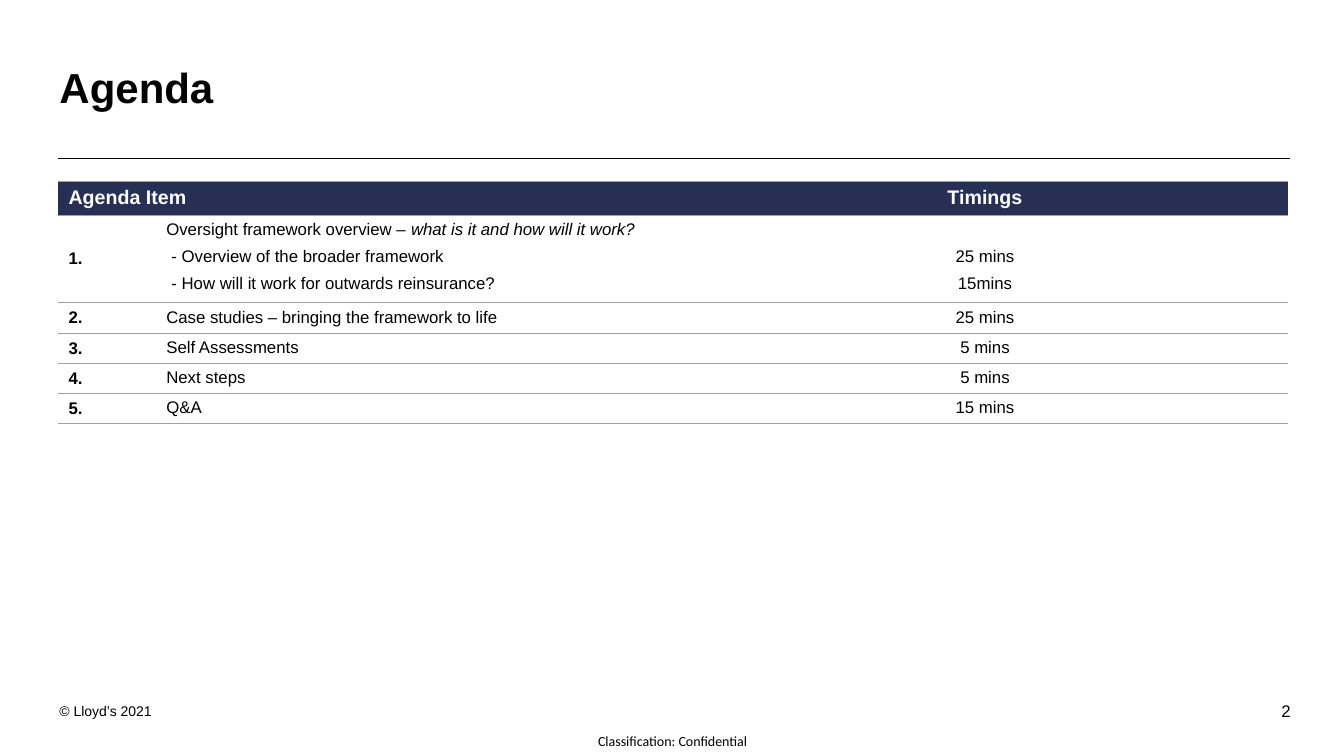
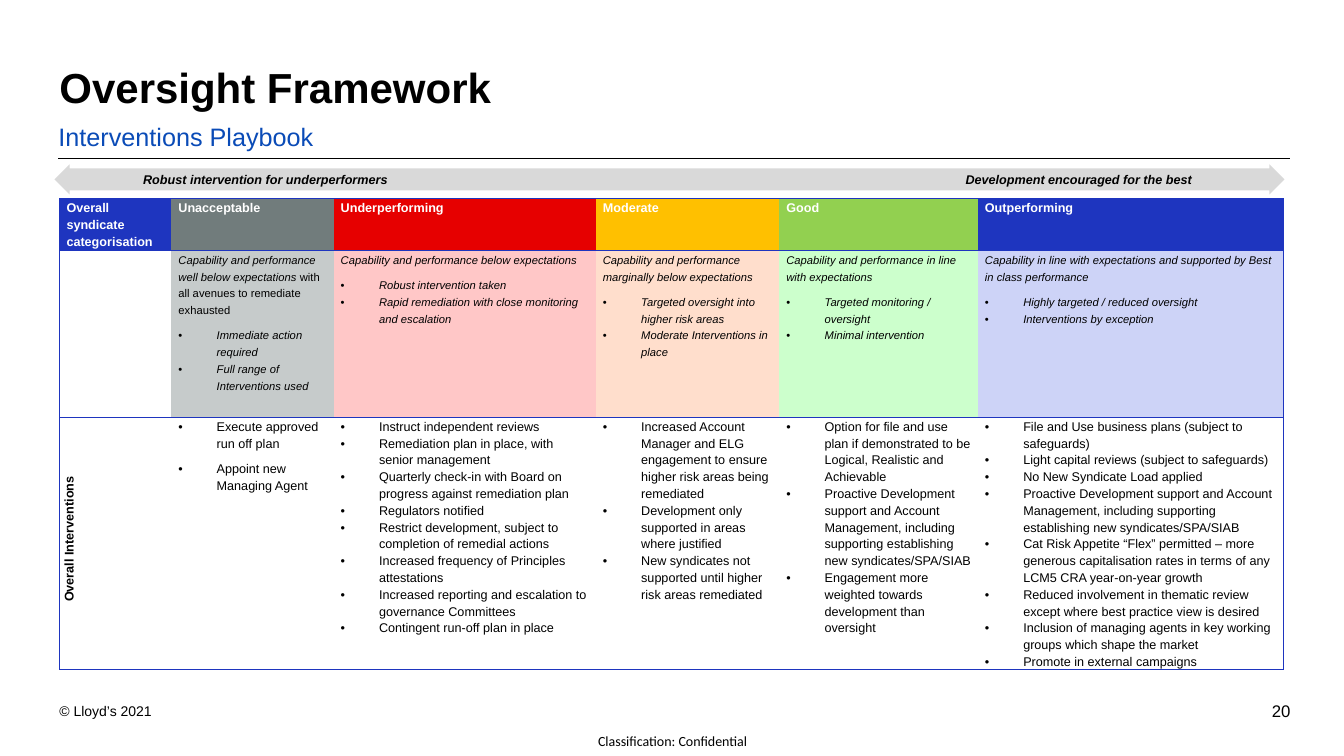
from dataclasses import dataclass
from lxml.etree import SubElement
from pptx import Presentation
from pptx.dml.color import RGBColor
from pptx.enum.shapes import MSO_CONNECTOR, MSO_SHAPE
from pptx.enum.text import MSO_ANCHOR, PP_ALIGN
from pptx.oxml import parse_xml
from pptx.oxml.ns import nsdecls, qn
from pptx.util import Inches, Pt

NAVY = "282F54"
BLUE = "1E35BF"
SUBTITLE_BLUE = "0A4BB7"
RULE_GREY = "A1A1A2"
ARROW_GREY = "D9D9D9"
BLACK = "000000"
WHITE = "FFFFFF"
PLAIN_TABLE = "{2D5ABB26-0587-4C30-8999-92F81FD0307C}"


def colour(code):
    return RGBColor.from_string(code)


@dataclass
class Span:
    text: str
    bold: bool = False
    italic: bool = False


@dataclass
class Para:
    spans: list
    after: float = 0
    left: float = 0
    bullet: bool = False
    align: PP_ALIGN = PP_ALIGN.LEFT
    spacing: object = None


class Deck:
    font = "Arial"
    left = 0.59
    width = 12.2

    def __init__(self):
        self.deck = Presentation()
        self.deck.slide_width = Inches(13.33)
        self.deck.slide_height = Inches(7.5)
        self.page = None

    def new_page(self, title, number, subtitle=None):
        self.page = self.deck.slides.add_slide(self.deck.slide_layouts[6])
        self.text(12.48, 6.91, 0.32, 0.28, Span(number), 12,
                  align=PP_ALIGN.RIGHT, anchor=MSO_ANCHOR.MIDDLE)
        self.text(self.left, 6.97, 1.63, 0.17, Span("© Lloyd’s 2021"), 10)
        self.rule(0.58, 1.57, 12.79)
        self.text(5.76, 7.21, 1.82, 0.29, Span("Classification: Confidential"), 10,
                  align=PP_ALIGN.CENTER, anchor=MSO_ANCHOR.MIDDLE, font="Calibri")
        self.text(self.left, 0.67, self.width, 0.45, Span(title, bold=True), 30, spacing=0.9)
        if subtitle:
            self.text(0.58, 1.2, self.width, 0.3, Span(subtitle), 18, SUBTITLE_BLUE)

    def text(self, x, y, width, height, span, size, ink=BLACK, align=PP_ALIGN.LEFT,
             anchor=MSO_ANCHOR.TOP, font=None, spacing=None):
        box = self.page.shapes.add_textbox(Inches(x), Inches(y), Inches(width), Inches(height))
        frame = box.text_frame
        frame.word_wrap = True
        frame.vertical_anchor = anchor
        frame.margin_left = frame.margin_right = frame.margin_top = frame.margin_bottom = 0
        self.add_paras(frame, [Para([span], align=align, spacing=spacing)], size, ink, font)

    def add_paras(self, frame, paras, size, ink, font=None):
        for index, item in enumerate(paras):
            para = frame.add_paragraph() if index else frame.paragraphs[0]
            properties = para._p.get_or_add_pPr()
            if item.left:
                properties.set("marL", str(Inches(item.left)))
            if item.bullet:
                properties.set("indent", str(-Inches(item.left)))
                SubElement(properties, qn("a:buFont")).set("typeface", self.font)
                SubElement(properties, qn("a:buChar")).set("char", "•")
            para.alignment = item.align
            para.space_after = Pt(item.after)
            if item.spacing:
                para.line_spacing = item.spacing
            for span in item.spans:
                run = para.add_run()
                run.text = span.text
                run.font.name = font or self.font
                run.font.size = Pt(size)
                run.font.bold = span.bold
                run.font.italic = span.italic
                run.font.color.rgb = colour(ink)

    def rule(self, x, y, end):
        line = self.page.shapes.add_connector(
            MSO_CONNECTOR.STRAIGHT, Inches(x), Inches(y), Inches(end), Inches(y))
        line.line.color.rgb = colour(BLACK)
        line.line.width = Pt(0.5)
        SubElement(line._element.spPr, qn("a:effectLst"))

    def double_arrow(self, x, y, width, height, fill):
        arrow = self.page.shapes.add_shape(
            MSO_SHAPE.LEFT_RIGHT_ARROW, Inches(x), Inches(y), Inches(width), Inches(height))
        arrow.adjustments[0] = 0.73
        arrow.adjustments[1] = 0.5
        arrow.shadow.inherit = False
        arrow.fill.solid()
        arrow.fill.fore_color.rgb = colour(fill)
        arrow.line.fill.background()

    def table(self, x, y, columns, rows):
        frame = self.page.shapes.add_table(
            len(rows), len(columns), Inches(x), Inches(y),
            Inches(sum(columns)), Inches(sum(rows)))
        table = frame.table
        table.first_row = table.horz_banding = False
        table._tbl.tblPr.find(qn("a:tableStyleId")).text = PLAIN_TABLE
        for column, width in zip(table.columns, columns):
            column.width = Inches(width)
        for row, height in zip(table.rows, rows):
            row.height = Inches(height)
        return table

    def cell(self, cell, paras, size, ink=BLACK, fill=None, side=0.1, edge=0.05,
             anchor=MSO_ANCHOR.TOP):
        cell.margin_left = cell.margin_right = Inches(side)
        cell.margin_top = cell.margin_bottom = Inches(edge)
        cell.vertical_anchor = anchor
        if fill:
            cell.fill.solid()
            cell.fill.fore_color.rgb = colour(fill)
        else:
            cell.fill.background()
        self.add_paras(cell.text_frame, paras, size, ink)

    def borders(self, cell, sides, ink, width):
        properties = cell._tc.get_or_add_tcPr()
        for index, side in enumerate(sides):
            properties.insert(index, parse_xml(
                f'<a:ln{side} {nsdecls("a")} w="{Pt(width)}"><a:solidFill>'
                f'<a:srgbClr val="{ink}"/></a:solidFill></a:ln{side}>'))


AGENDA = [
    ("2.", "Case studies – bringing the framework to life", "25 mins"),
    ("3.", "Self Assessments", "5 mins"),
    ("4.", "Next steps", "5 mins"),
    ("5.", "Q&A", "15 mins"),
]

CATEGORIES = [
    ("Unacceptable", "717C7C", "C6CBCB",
     "Capability and performance well below expectations ",
     ["Immediate action required", "Full range of Interventions used"],
     ["Execute approved run off plan", "Appoint new Managing Agent"]),
    ("Underperforming", "E60000", "FFC7C7",
     "Capability and performance below expectations",
     ["Robust intervention taken", "Rapid remediation with close monitoring and escalation"],
     ["Instruct independent reviews",
      "Remediation plan in place, with senior management",
      "Quarterly check-in with Board on progress against remediation plan",
      "Regulators notified",
      "Restrict development, subject to completion of remedial actions",
      "Increased frequency of Principles attestations",
      "Increased reporting and escalation to governance Committees",
      "Contingent run-off plan in place"]),
    ("Moderate", "FFC000", "FFDECC",
     "Capability and performance marginally below expectations",
     ["Targeted oversight into higher risk areas", "Moderate Interventions in place"],
     ["Increased Account Manager and ELG engagement to ensure higher risk areas being remediated",
      "Development only supported in areas where justified",
      "New syndicates not supported until higher risk areas remediated"]),
    ("Good", "92D050", "CCFFCC",
     "Capability and performance in line with expectations",
     ["Targeted monitoring / oversight", "Minimal intervention"],
     ["Option for file and use plan if demonstrated to be Logical, Realistic and Achievable",
      "Proactive Development support and Account Management, including supporting "
      "establishing new syndicates/SPA/SIAB",
      "Engagement more weighted towards development than oversight"]),
    ("Outperforming", BLUE, "CDD3F7",
     "Capability in line with expectations and supported by Best in class performance",
     ["Highly targeted / reduced oversight", "Interventions by exception"],
     ["File and Use business plans (subject to safeguards)",
      "Light capital reviews (subject to safeguards)",
      "No New Syndicate Load applied",
      "Proactive Development support and Account Management, including supporting "
      "establishing new syndicates/SPA/SIAB",
      "Cat Risk Appetite “Flex” permitted – more generous capitalisation rates in terms "
      "of any LCM5 CRA year-on-year growth",
      "Reduced involvement in thematic review except where best practice view is desired",
      "Inclusion of managing agents in key working groups which shape the market",
      "Promote in external campaigns"]),
]


def agenda_page(deck):
    deck.new_page("Agenda", "2")
    table = deck.table(0.58, 1.8, [0.97, 5.21, 6.02], [0.33, 0.87] + [0.3] * len(AGENDA))
    centre = PP_ALIGN.CENTER
    table.cell(0, 0).merge(table.cell(0, 1))
    deck.cell(table.cell(0, 0), [Para([Span("Agenda Item", True)])], 14, WHITE, NAVY)
    deck.cell(table.cell(0, 2), [Para([Span("Timings", True)], align=centre)], 14, WHITE, NAVY)
    overview = [
        Para([Span("Oversight framework overview – "),
              Span("what is it and how will it work?", italic=True)], 6),
        Para([Span("- Overview of the broader framework")], 6, 0.05),
        Para([Span("- How will it work for outwards reinsurance?")], 6, 0.05),
    ]
    timings = [Para([Span(time)], 6, align=centre) for time in ("25 mins", "15mins")]
    rows = [("1.", overview, timings)]
    rows += [(number, [Para([Span(topic)], 6)], [Para([Span(time)], 6, align=centre)])
             for number, topic, time in AGENDA]
    for index, (number, topic, time) in enumerate(rows, 1):
        deck.cell(table.cell(index, 0), [Para([Span(number, True)], 6)], 12,
                  anchor=MSO_ANCHOR.MIDDLE)
        deck.cell(table.cell(index, 1), topic, 12)
        deck.cell(table.cell(index, 2), time, 12)
    table.cell(1, 2).margin_top = Inches(0.32)
    for cell in table.iter_cells():
        deck.borders(cell, "TB", RULE_GREY, 0.75)


def playbook_page(deck):
    deck.new_page("Oversight Framework", "20", "Interventions Playbook")
    table = deck.table(0.59, 1.97, [1.11, 1.61, 2.6, 1.82, 1.97, 3.03], [0.51, 1.66, 2.49])
    tight = {"side": 0.07, "edge": 0}
    pitch = Pt(12)

    def line(*spans, **options):
        return Para(list(spans), spacing=pitch, **options)

    def bullets(items, italic=False, after=0):
        return [line(Span(item, italic=italic), left=0.38, bullet=True, after=after)
                for item in items]

    deck.cell(table.cell(0, 0), [line(Span("Overall syndicate categorisation", True), after=6)],
              9, WHITE, BLUE, **tight)
    deck.cell(table.cell(2, 0),
              [line(Span("Overall Interventions", True), after=6, left=0.08,
                    align=PP_ALIGN.CENTER)],
              9, anchor=MSO_ANCHOR.BOTTOM, **tight)
    table.cell(2, 0)._tc.tcPr.set("vert", "vert270")

    for column, (name, strong, pale, summary, stance, actions) in enumerate(CATEGORIES, 1):
        first = column == 1
        spans = [Span(summary, italic=True)]
        if first:
            spans.append(Span("with all avenues to remediate exhausted"))
        deck.cell(table.cell(0, column), [line(Span(name, True), after=6)],
                  9, WHITE, strong, **tight)
        deck.cell(table.cell(1, column), [line(*spans, after=6)] + bullets(stance, True),
                  8, fill=pale, **tight)
        deck.cell(table.cell(2, column), bullets(actions, after=6 if first else 0), 9, **tight)

    for row in range(3):
        for column in range(6):
            sides = {0: "LTB", 5: "RTB"}.get(column, "TB")
            deck.borders(table.cell(row, column), sides, BLUE, 0.5)

    deck.double_arrow(0.54, 1.63, 12.2, 0.3, ARROW_GREY)
    deck.text(1.42, 1.71, 2.6, 0.15,
              Span("Robust intervention for underperformers", True, True), 9)
    deck.text(9.32, 1.71, 2.5, 0.15,
              Span("Development encouraged for the best", True, True), 9, align=PP_ALIGN.RIGHT)


def main():
    deck = Deck()
    agenda_page(deck)
    playbook_page(deck)
    deck.deck.save("out.pptx")


if __name__ == "__main__":
    main()
